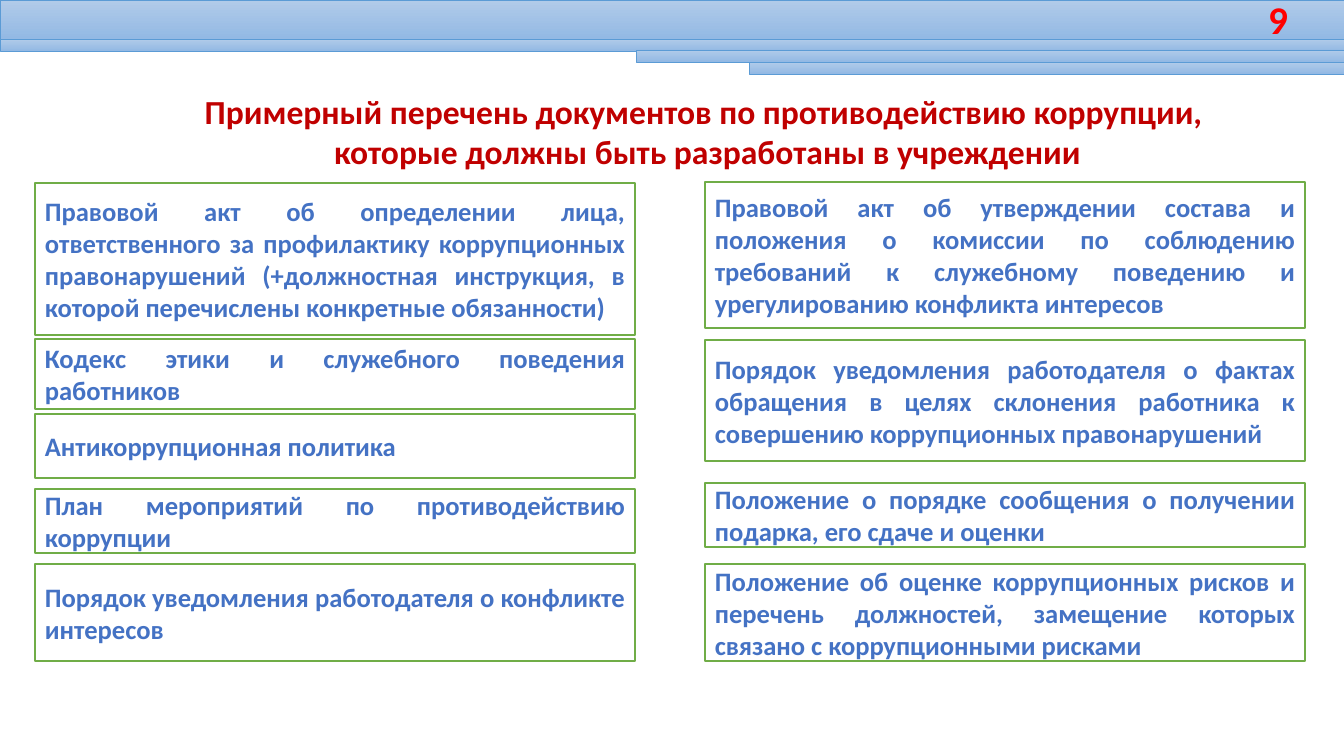
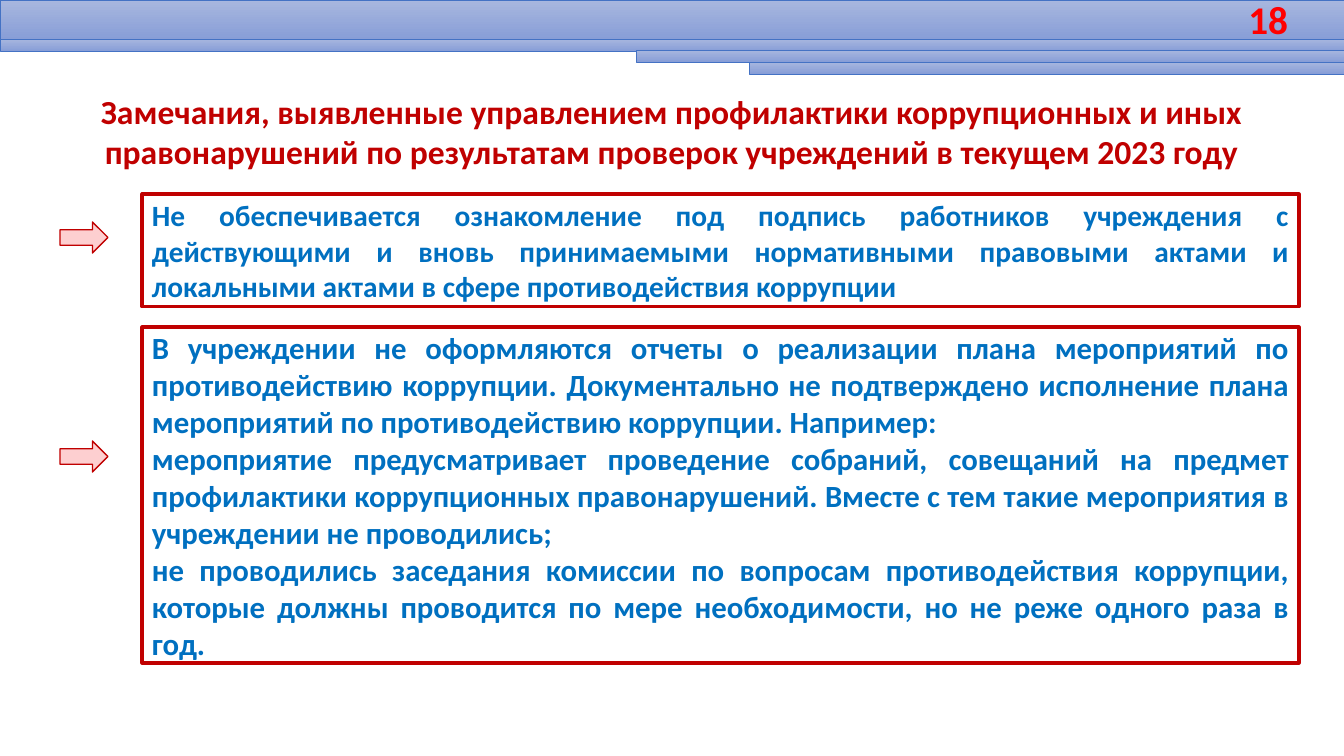
from pptx import Presentation
from pptx.dml.color import RGBColor
from pptx.enum.shapes import MSO_SHAPE
from pptx.enum.text import MSO_ANCHOR, MSO_AUTO_SIZE, PP_ALIGN
from pptx.util import Emu, Pt

RECTANGLE = MSO_SHAPE.RECTANGLE
RIGHT_ARROW = MSO_SHAPE.RIGHT_ARROW
TOP, MIDDLE = MSO_ANCHOR.TOP, MSO_ANCHOR.MIDDLE
NO_AUTOFIT = MSO_AUTO_SIZE.NONE
CENTER, RIGHT, JUSTIFY = PP_ALIGN.CENTER, PP_ALIGN.RIGHT, PP_ALIGN.JUSTIFY

SLIDE_WIDTH, SLIDE_HEIGHT = 1344, 756
EMU_PER_PX = 12192000 / SLIDE_WIDTH
TITLE_ONLY = 5
FONT = "Calibri"

RED = RGBColor(0xFF, 0x00, 0x00)
DARK_RED = RGBColor(0xC0, 0x00, 0x00)
PINK = RGBColor(0xFD, 0xCF, 0xD0)
GREEN = RGBColor(0x70, 0xAD, 0x47)
INDIGO = RGBColor(0x44, 0x72, 0xC4)
BLUE = RGBColor(0x00, 0x70, 0xC0)
SKY = RGBColor(0x5B, 0x9B, 0xD5)
SKY_BAND = (RGBColor(0xB1, 0xCB, 0xE9), RGBColor(0x93, 0xB9, 0xE4), SKY)
INDIGO_BAND = (RGBColor(0xA8, 0xB7, 0xDF), RGBColor(0x88, 0x9E, 0xD7), INDIGO)

BANDS = [(0, 0, 39), (0, 39, 12), (636, 50, 12), (749, 62, 12)]

CARD_WIDTH = 600
CARD_COLUMNS = [
    (35, [
        (183, 152, "Правовой акт об определении лица, ответственного за профилактику "
                   "коррупционных правонарушений (+должностная инструкция, в которой "
                   "перечислены конкретные обязанности)"),
        (339, 70, "Кодекс этики и служебного поведения работников"),
        (414, 64, "Антикоррупционная политика"),
        (489, 64, "План мероприятий по противодействию коррупции"),
        (564, 97, "Порядок уведомления работодателя о конфликте интересов"),
    ]),
    (705, [
        (182, 146, "Правовой акт об утверждении состава и положения о комиссии по "
                   "соблюдению требований к служебному поведению и урегулированию "
                   "конфликта интересов"),
        (340, 121, "Порядок уведомления работодателя о фактах обращения в целях склонения "
                   "работника к совершению коррупционных правонарушений"),
        (483, 64, "Положение о порядке сообщения о получении подарка, его сдаче и оценки"),
        (564, 97, "Положение об оценке коррупционных рисков и перечень должностей, "
                  "замещение которых связано с коррупционными рисками"),
    ]),
]

REMARKS = [
    (194, 113, 222, 21, "Не обеспечивается ознакомление под подпись работников учреждения с "
     "действующими и вновь принимаемыми нормативными правовыми актами и локальными актами "
     "в сфере противодействия коррупции"),
    (327, 336, 441, 22, "В учреждении не оформляются отчеты о реализации плана мероприятий по "
     "противодействию коррупции. Документально не подтверждено исполнение плана "
     "мероприятий по противодействию коррупции. Например:\n"
     "мероприятие предусматривает проведение собраний, совещаний на предмет профилактики "
     "коррупционных правонарушений. Вместе с тем такие мероприятия в учреждении не "
     "проводились;\n"
     "не проводились заседания комиссии по вопросам противодействия коррупции, которые "
     "должны проводится по мере необходимости, но не реже одного раза в год."),
]


def px(*lengths):
    """Turn pixel lengths into EMU."""
    return [Emu(round(length * EMU_PER_PX)) for length in lengths]


class Deck:
    """Hold the presentation, its style and the current slide."""

    def __init__(self):
        """Start an empty widescreen presentation."""
        self.presentation = Presentation()
        self.presentation.slide_width, self.presentation.slide_height = px(
            SLIDE_WIDTH, SLIDE_HEIGHT)
        self.slide = None

    def start_slide(self, number, title, title_left, band_colors):
        """Add a slide with its bands, number and title."""
        layout = self.presentation.slide_layouts[TITLE_ONLY]
        self.slide = self.presentation.slides.add_slide(layout)
        for left, top, height in BANDS:
            self.band(left, top, height, *band_colors)
        self.number(number)
        self.title(title, title_left)

    def set_text(self, shape, text, size, color, alignment, anchor=MIDDLE):
        """Put bold text into a shape, one paragraph a line."""
        frame = shape.text_frame
        frame.text = text
        frame.word_wrap = True
        frame.auto_size = NO_AUTOFIT
        frame.vertical_anchor = anchor
        for paragraph in frame.paragraphs:
            paragraph.alignment = alignment
            paragraph.font.name = FONT
            paragraph.font.size = Pt(size)
            paragraph.font.bold = True
            paragraph.font.color.rgb = color

    def outline(self, kind, left, top, width, height, color, weight):
        """Add an unfilled preset shape with a coloured line."""
        shape = self.slide.shapes.add_shape(kind, *px(left, top, width, height))
        shape.shadow.inherit = False
        shape.fill.background()
        shape.line.color.rgb = color
        shape.line.width = Pt(weight)
        return shape

    def band(self, left, top, height, light, dark, line):
        """Add a gradient band that runs to the right edge."""
        shape = self.outline(RECTANGLE, left, top, SLIDE_WIDTH - left, height, line, 0.5)
        shape.fill.gradient()
        shape.fill.gradient_angle = 270
        for stop, color in zip(shape.fill.gradient_stops, (light, dark)):
            stop.color.rgb = color

    def number(self, number):
        """Show the slide number in the top band."""
        box = self.slide.shapes.add_textbox(*px(1172, 0, 126, 38))
        self.set_text(box, str(number), 28, RED, RIGHT)

    def title(self, text, left):
        """Place and fill the title placeholder."""
        title = self.slide.shapes.title
        title.left, title.top, title.width, title.height = px(left, 86, 1223, 92)
        self.set_text(title, text, 24, DARK_RED, CENTER, TOP)

    def card(self, left, top, width, height, text, size, color, line, weight):
        """Add an outlined box with justified text."""
        shape = self.outline(RECTANGLE, left, top, width, height, line, weight)
        self.set_text(shape, text, size, color, JUSTIFY)

    def arrow(self, left, top):
        """Add a pink block arrow."""
        shape = self.outline(RIGHT_ARROW, left, top, 48, 31, DARK_RED, 1)
        shape.fill.solid()
        shape.fill.fore_color.rgb = PINK


def main():
    """Build and save both slides."""
    deck = Deck()
    deck.start_slide(9, "Примерный перечень документов по противодействию коррупции, \n"
                     "которые должны быть разработаны в учреждении", 96, SKY_BAND)
    for left, cards in CARD_COLUMNS:
        for top, height, text in cards:
            deck.card(left, top, CARD_WIDTH, height, text, 19, INDIGO, GREEN, 1)

    deck.start_slide(18, "Замечания, выявленные управлением профилактики коррупционных и иных "
                     "правонарушений по результатам проверок учреждений в текущем 2023 году",
                     60, INDIGO_BAND)
    for top, height, arrow_top, size, text in REMARKS:
        deck.card(142, top, 1157, height, text, size, BLUE, DARK_RED, 2.25)
        deck.arrow(60, arrow_top)
    deck.presentation.save("out.pptx")


if __name__ == "__main__":
    main()
